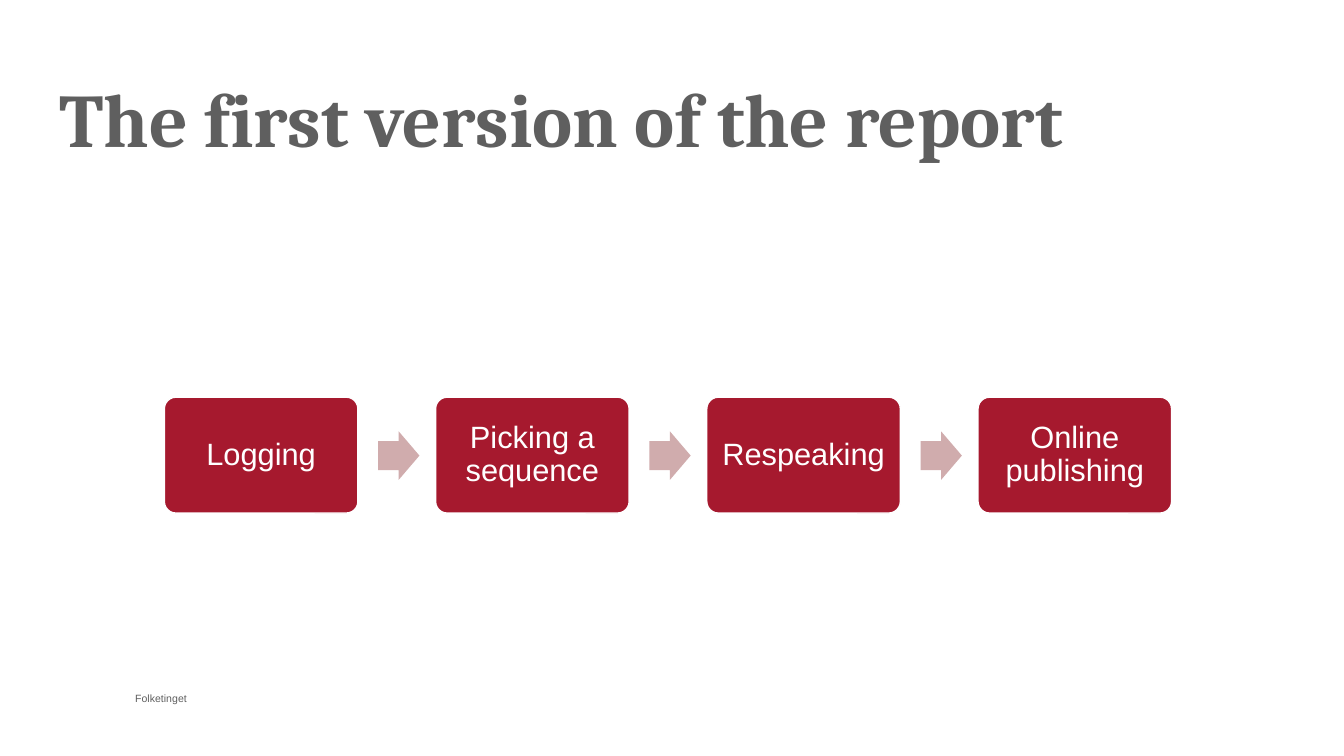
import pptx
import pptx.util
import pptx.dml.color
import pptx.enum.shapes
import pptx.enum.text

Kind = pptx.enum.shapes.MSO_SHAPE
Align = pptx.enum.text.PP_ALIGN
Anchor = pptx.enum.text.MSO_ANCHOR
Fit = pptx.enum.text.MSO_AUTO_SIZE

PX = 9144  # EMU per px, 100 px to the inch
HUES = {"red": "A6192E", "pink": "D0ACAD", "grey": "5F5F5F", "white": "FFFFFF"}
STEPS = ["Logging", "Picking a sequence", "Respeaking", "Online publishing"]
LEFT, TOP, WIDE, HIGH, PITCH = 163, 394, 192, 115, 269


def hue(name):
    return pptx.dml.color.RGBColor.from_string(HUES[name])


def px(*sizes):
    return [size * PX for size in sizes]


def apply(item, form):
    for key, value in form.items():
        setattr(item, key, value)


def write(shape, text, color, font, frame, para, inset=0):
    body = shape.text_frame
    sides = ("left", "top", "right", "bottom")
    apply(body, {f"margin_{side}": inset * PX for side in sides})
    apply(body, {"auto_size": Fit.NONE, "word_wrap": True, **frame})
    body.text = text
    line = body.paragraphs[0]
    apply(line, para)
    apply(line.font, font)
    line.font.color.rgb = hue(color)


def block(slide, kind, box, fill, adjust):
    shape = slide.shapes.add_shape(kind, *px(*box))
    shape.shadow.inherit = False
    shape.fill.solid()
    shape.fill.fore_color.rgb = hue(fill)
    shape.line.fill.background()
    for i, value in enumerate(adjust):
        shape.adjustments[i] = value
    return shape


def step(slide, left, text):
    card = block(slide, Kind.ROUNDED_RECTANGLE, (left, TOP, WIDE, HIGH), "red", [0.1])
    card.line.color.rgb = hue("white")
    card.line.width = pptx.util.Pt(1)
    write(card, text, "white",
          {"name": "Arial", "size": pptx.util.Pt(22)},
          {"vertical_anchor": Anchor.MIDDLE},
          {"alignment": Align.CENTER, "line_spacing": 0.9}, inset=9)


def arrow(slide, left):
    block(slide, Kind.RIGHT_ARROW, (left, 428, 41, 48), "pink", [0.6, 0.5])


def head(slide, text):
    title = slide.shapes.title
    apply(title, dict(zip(("left", "top", "width", "height"), px(59, 80, 1215, 126))))
    write(title, text, "grey",
          {"name": "Cambria", "size": pptx.util.Pt(54), "bold": True},
          {"vertical_anchor": Anchor.TOP},
          {"alignment": Align.LEFT, "line_spacing": 0.92})


def foot(slide, text):
    box = slide.shapes.add_textbox(*px(134, 687, 63, 13))
    write(box, text, "grey", {"name": "Arial", "size": pptx.util.Pt(7.5)},
          {"word_wrap": False}, {"alignment": Align.LEFT})


def main():
    deck = pptx.Presentation()
    deck.slide_width, deck.slide_height = px(1333, 750)
    slide = deck.slides.add_slide(deck.slide_layouts[5])

    # Footer and title
    foot(slide, "Folketinget")
    head(slide, "The first version of the report")

    # Process: a card per step, an arrow between cards
    for i, text in enumerate(STEPS):
        left = LEFT + i * PITCH
        step(slide, left, text)
        if i < len(STEPS) - 1:
            arrow(slide, left + 212)

    deck.save("out.pptx")


if __name__ == "__main__":
    main()
